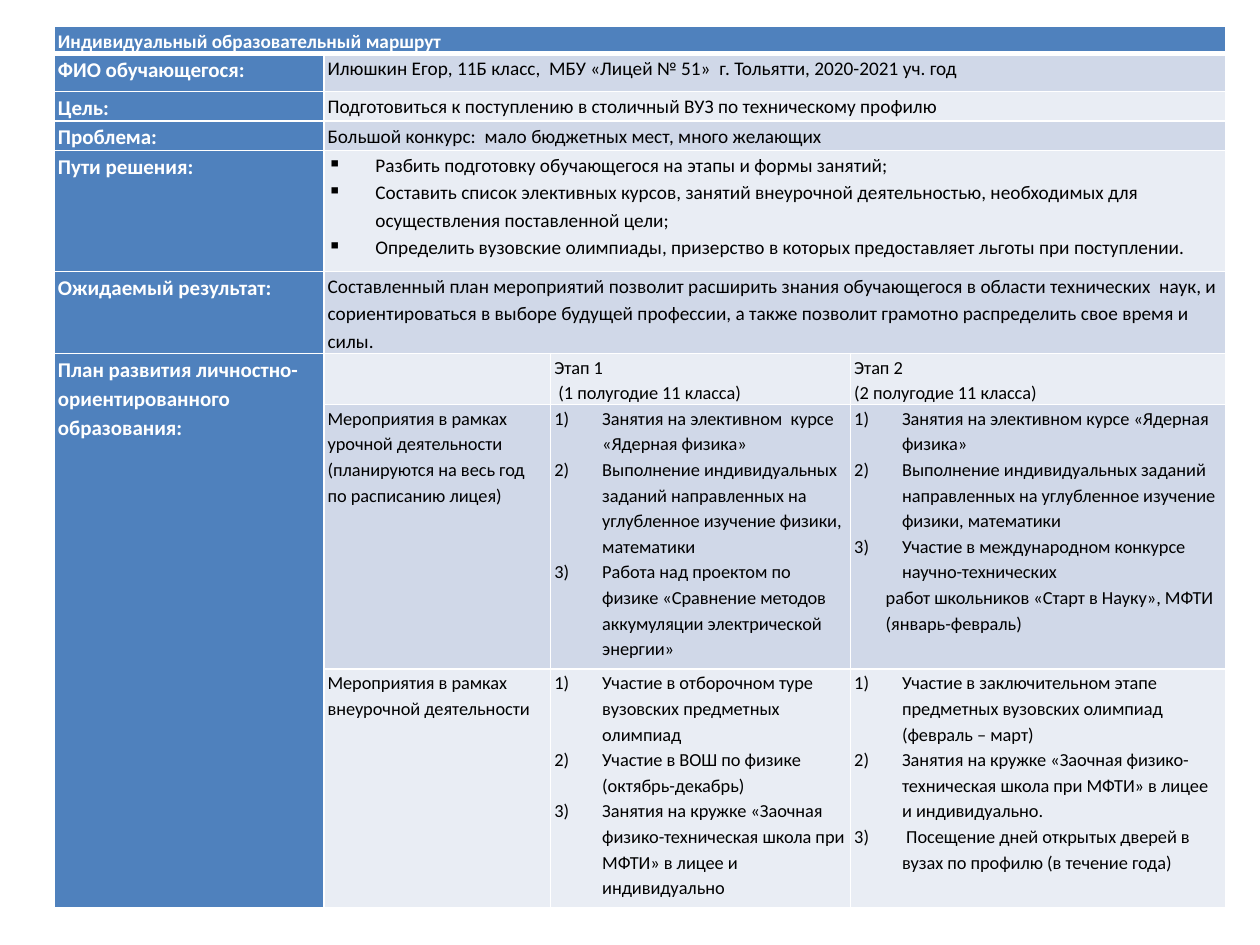
from lxml.etree import SubElement
from pptx import Presentation
from pptx.dml.color import RGBColor
from pptx.enum.text import MSO_ANCHOR
from pptx.oxml.ns import qn
from pptx.util import Inches, Pt

BLUE = RGBColor(0x4F, 0x81, 0xBD)
BAND_DARK = RGBColor(0xD0, 0xD8, 0xE8)
BAND_LIGHT = RGBColor(0xE9, 0xED, 0xF4)
WHITE = RGBColor(0xFF, 0xFF, 0xFF)
BLACK = RGBColor(0, 0, 0)

COLUMNS = [2.14, 1.8, 2.38, 2.98]
ROWS = [0.19, 0.3, 0.16, 0.16, 0.96, 0.45, 0.32, 2.1, 1.89]
BULLET, NUMBER, INDENT, PLAIN = "bullet", "number", "indent", "plain"
INDENTS = {BULLET: (0.38, -0.38), NUMBER: (0.38, -0.38), INDENT: (0.25, 0)}

HEADING = "Индивидуальный образовательный маршрут"
PASSPORT = [
    ("ФИО обучающегося:", PLAIN,
     ["Илюшкин Егор, 11Б класс,  МБУ «Лицей № 51»  г. Тольятти, 2020-2021 уч. год"]),
    ("Цель:", PLAIN,
     ["Подготовиться к поступлению в столичный ВУЗ по техническому профилю"]),
    ("Проблема:", PLAIN,
     ["Большой конкурс:  мало бюджетных мест, много желающих"]),
    ("Пути решения:", BULLET,
     ["Разбить подготовку обучающегося на этапы и формы занятий;",
      "Составить список элективных курсов, занятий внеурочной деятельностью, "
      "необходимых для осуществления поставленной цели;",
      "Определить вузовские олимпиады, призерство в которых предоставляет "
      "льготы при поступлении."]),
    ("Ожидаемый результат:", PLAIN,
     ["Составленный план мероприятий позволит расширить знания обучающегося в области "
      "технических  наук, и сориентироваться в выборе будущей профессии, а также "
      "позволит грамотно распределить свое время и силы."]),
]
PLAN_LABEL = "План развития личностно-ориентированного образования:"
TASKS = "Выполнение индивидуальных заданий направленных на углубленное изучение физики, математики"
CLUB = "Занятия на кружке «Заочная физико-техническая школа при МФТИ» в лицее и индивидуально"
PLAN = [
    [(PLAIN, []),
     (PLAIN, ["Этап 1", " (1 полугодие 11 класса)"]),
     (PLAIN, ["Этап 2", "(2 полугодие 11 класса)"])],
    [(PLAIN, ["Мероприятия в рамках урочной деятельности "
              "(планируются на весь год по расписанию лицея)"]),
     (NUMBER, ["Занятия на элективном  курсе «Ядерная физика»",
               TASKS,
               "Работа над проектом по физике «Сравнение методов аккумуляции "
               "электрической энергии»"]),
     (NUMBER, ["Занятия на элективном курсе «Ядерная физика»",
               TASKS,
               "Участие в международном конкурсе  научно-технических",
               (INDENT, "работ школьников «Старт в Науку», МФТИ (январь-февраль)")])],
    [(PLAIN, ["Мероприятия в рамках внеурочной деятельности"]),
     (NUMBER, ["Участие в отборочном туре вузовских предметных олимпиад",
               "Участие в ВОШ по физике  (октябрь-декабрь)",
               CLUB]),
     (NUMBER, ["Участие в заключительном этапе предметных вузовских олимпиад "
               "(февраль – март)",
               CLUB + ".",
               " Посещение дней открытых дверей в вузах по профилю (в течение года)"])],
]


def add_marker(paragraph, style):
    properties = paragraph._p.get_or_add_pPr()
    left, first = INDENTS.get(style, (0, 0))
    properties.set("marL", str(Inches(left)))
    properties.set("indent", str(Inches(first)))
    if style == BULLET:
        SubElement(properties, qn("a:buChar"), char="▪")
    elif style == NUMBER:
        SubElement(properties, qn("a:buAutoNum"), type="arabicParenR")


def write_cell(cell, lines, size, color=BLACK, bold=False, style=PLAIN):
    cell.margin_left = cell.margin_right = Inches(0.03)
    cell.margin_top = cell.margin_bottom = 0
    frame = cell.text_frame
    for index, line in enumerate(lines):
        line_style, text = line if isinstance(line, tuple) else (style, line)
        paragraph = frame.add_paragraph() if index else frame.paragraphs[0]
        paragraph.text = text
        add_marker(paragraph, line_style)
        paragraph.line_spacing = 1.15
        for run in paragraph.runs:
            run.font.name = "Calibri"
            run.font.size = Pt(size)
            run.font.bold = bold
            run.font.color.rgb = color


def draw_borders(cell, row):
    properties = cell._tc.get_or_add_tcPr()
    widths = {"L": 1, "R": 1, "T": 3 if row == 1 else 1, "B": 3 if row == 0 else 1}
    for side, width in widths.items():
        line = SubElement(properties, qn("a:ln" + side), w=str(Pt(width)))
        fill = SubElement(line, qn("a:solidFill"))
        SubElement(fill, qn("a:srgbClr"), val=str(WHITE))


def paint_grid(table):
    for row in range(len(ROWS)):
        band = BAND_DARK if row % 2 else BAND_LIGHT
        for column in range(len(COLUMNS)):
            cell = table.cell(row, column)
            draw_borders(cell, row)
            cell.fill.solid()
            cell.fill.fore_color.rgb = BLUE if row == 0 or column == 0 else band


def add_route_table(slide):
    table = slide.shapes.add_table(
        len(ROWS), len(COLUMNS), Inches(0.43), Inches(0.21),
        Inches(sum(COLUMNS)), Inches(sum(ROWS))).table
    for column, width in zip(table.columns, COLUMNS):
        column.width = Inches(width)
    for row, height in zip(table.rows, ROWS):
        row.height = Inches(height)
    paint_grid(table)
    return table


def fill_passport(table):
    heading = table.cell(0, 0)
    heading.merge(table.cell(0, 3))
    heading.vertical_anchor = MSO_ANCHOR.MIDDLE
    write_cell(heading, [HEADING], 11, WHITE, True)
    for row, (label, style, lines) in enumerate(PASSPORT, 1):
        write_cell(table.cell(row, 0), [label], 12, WHITE, True)
        table.cell(row, 1).merge(table.cell(row, 3))
        write_cell(table.cell(row, 1), lines, 11, style=style)


def fill_plan(table):
    start = len(PASSPORT) + 1
    label = table.cell(start, 0)
    label.merge(table.cell(len(ROWS) - 1, 0))
    write_cell(label, [PLAN_LABEL], 12, WHITE, True)
    for row, stages in enumerate(PLAN, start):
        for column, (style, lines) in enumerate(stages, 1):
            write_cell(table.cell(row, column), lines, 10.5, style=style)


def main():
    deck = Presentation()
    deck.slide_width, deck.slide_height = Inches(10), Inches(7.5)
    slide = deck.slides.add_slide(deck.slide_layouts[6])
    table = add_route_table(slide)
    fill_passport(table)
    fill_plan(table)
    deck.save("out.pptx")


if __name__ == "__main__":
    main()
